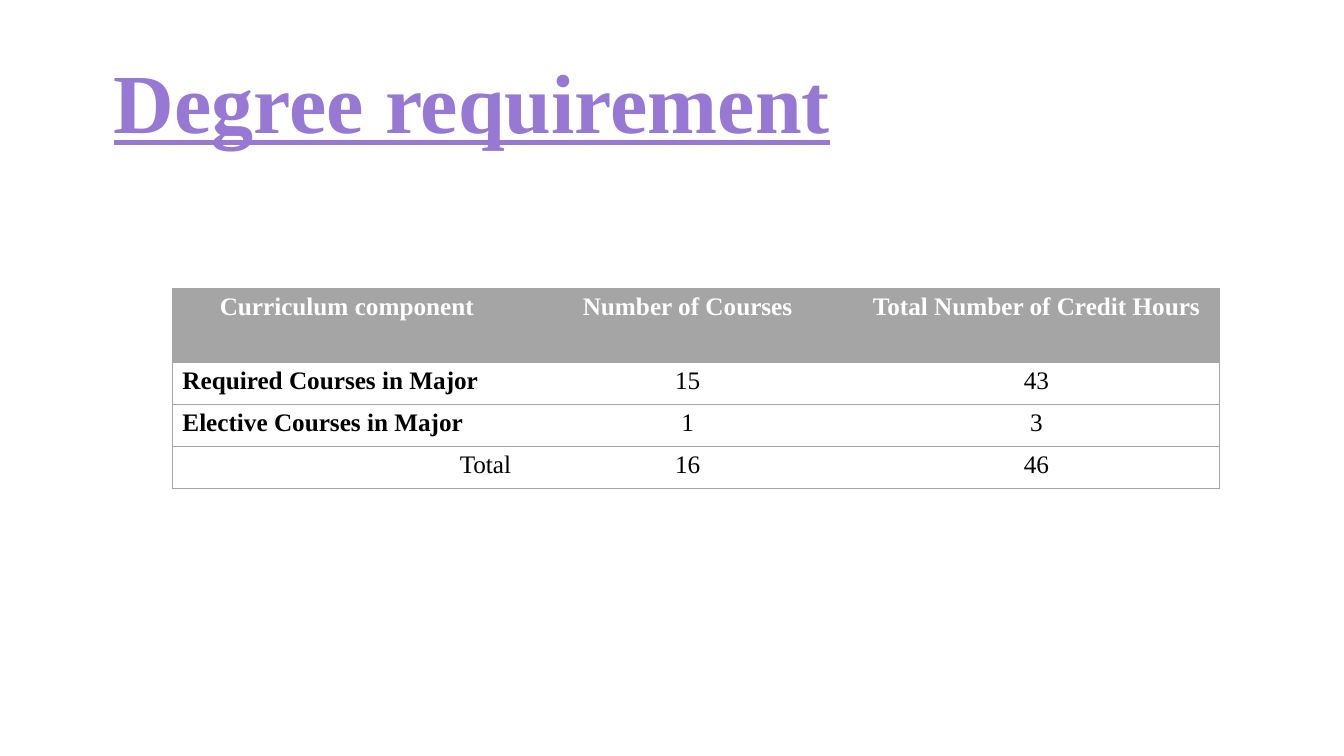
import pptx
import pptx.util
import pptx.dml.color
import pptx.enum.text
import pptx.oxml
import pptx.oxml.ns
import lxml.etree

Inches = pptx.util.Inches
Pt = pptx.util.Pt
ALIGN = pptx.enum.text.PP_ALIGN
FONT = "Times New Roman"
GREY = "A5A5A5"


def color(hex_value):
    return pptx.dml.color.RGBColor.from_string(hex_value)


def set_border(cell, side, visible):
    """Draw one side of a cell in grey, or leave it without a line."""
    properties = cell._tc.get_or_add_tcPr()
    line = lxml.etree.SubElement(properties, pptx.oxml.ns.qn("a:" + side), w=str(Pt(0.5)))
    if visible:
        solid = lxml.etree.SubElement(line, pptx.oxml.ns.qn("a:solidFill"))
        lxml.etree.SubElement(solid, pptx.oxml.ns.qn("a:srgbClr"), val=GREY)
    else:
        lxml.etree.SubElement(line, pptx.oxml.ns.qn("a:noFill"))


presentation = pptx.Presentation()
presentation.slide_width = Inches(13.33)
presentation.slide_height = Inches(7.5)
slide = presentation.slides.add_slide(presentation.slide_layouts[5])

# Title
title = slide.shapes.title
title.left, title.top = Inches(1.03), Inches(0.33)
title.width, title.height = Inches(11.5), Inches(1.45)
title.text_frame.text = "Degree requirement"
title.text_frame.vertical_anchor = pptx.enum.text.MSO_ANCHOR.MIDDLE
heading = title.text_frame.paragraphs[0]
heading.alignment = ALIGN.LEFT
heading.line_spacing = 0.9
heading_font = heading.runs[0].font
heading_font.name = FONT
heading_font.size = Pt(60)
heading_font.bold = True
heading_font.underline = True
heading_font.color.rgb = color("9779D3")

# Credit table
curriculum = [
    ("Curriculum component", "Number of Courses", "Total Number of Credit Hours"),
    ("Required Courses in Major", "15", "43"),
    ("Elective Courses in Major", "1", "3"),
    ("Total", "16", "46"),
]
component_alignments = [ALIGN.CENTER, ALIGN.LEFT, ALIGN.LEFT, ALIGN.RIGHT]
column_widths = [3.46, 3.3, 3.62]
row_heights = [0.73, 0.42, 0.42, 0.42]

credits = slide.shapes.add_table(
    len(curriculum), len(column_widths),
    Inches(1.71), Inches(2.86), Inches(sum(column_widths)), Inches(sum(row_heights)),
).table
credits.horz_banding = False
for column, width in zip(credits.columns, column_widths):
    column.width = Inches(width)
for row, height in zip(credits.rows, row_heights):
    row.height = Inches(height)

for r, entries in enumerate(curriculum):
    for c, entry in enumerate(entries):
        cell = credits.cell(r, c)
        cell.text_frame.text = entry
        paragraph = cell.text_frame.paragraphs[0]
        paragraph.alignment = component_alignments[r] if c == 0 else ALIGN.CENTER
        font = paragraph.runs[0].font
        font.name = FONT
        font.size = Pt(18)
        font.bold = r == 0 or (c == 0 and entry != "Total")
        font.color.rgb = color("FFFFFF" if r == 0 else "000000")

        # Outer frame and row rules, no lines between columns
        set_border(cell, "lnL", c == 0)
        set_border(cell, "lnR", c == len(entries) - 1)
        set_border(cell, "lnT", True)
        set_border(cell, "lnB", True)
        if r == 0:
            cell.fill.solid()
            cell.fill.fore_color.rgb = color(GREY)
        else:
            cell.fill.background()

presentation.save("out.pptx")
